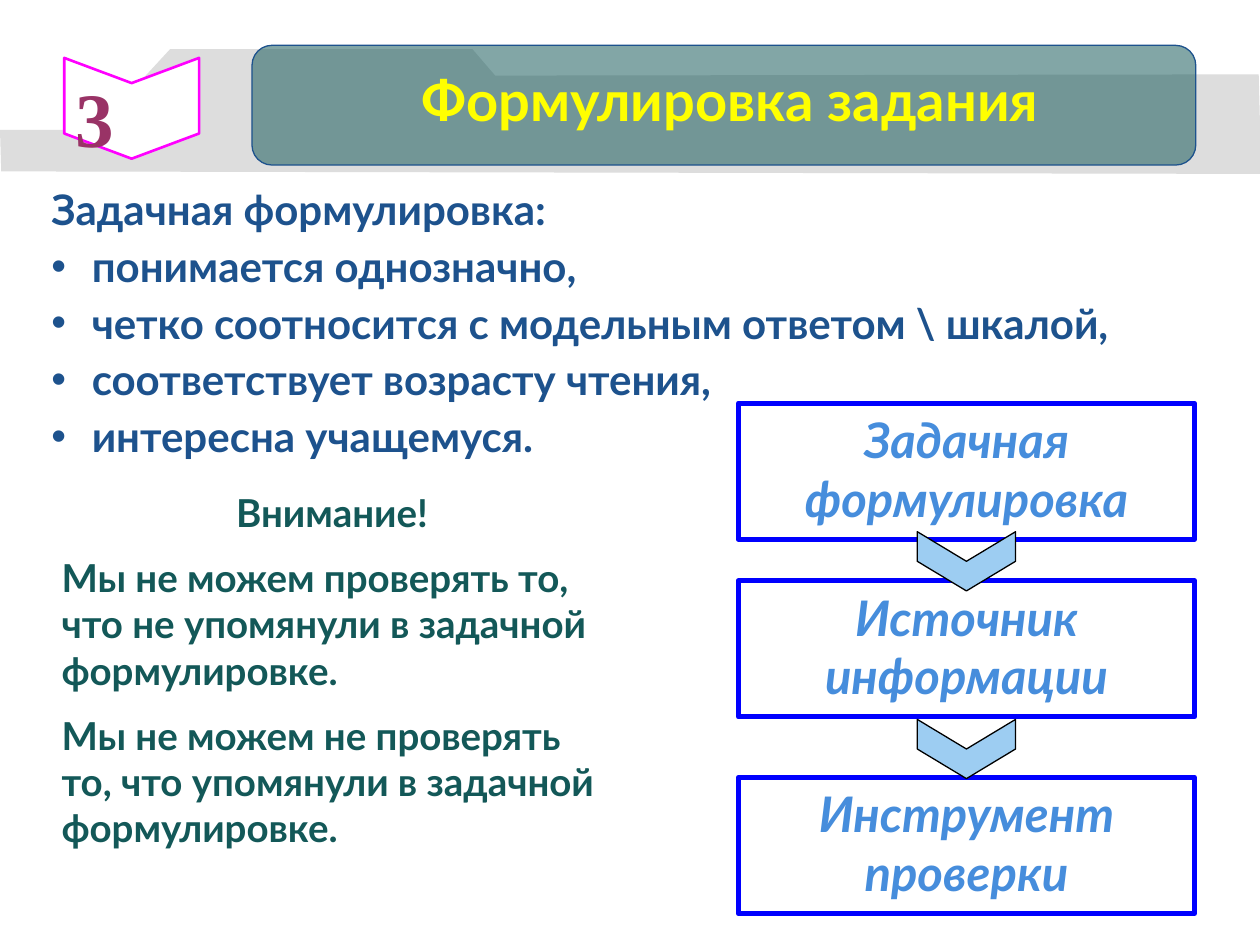
from lxml import etree
from pptx import Presentation
from pptx.dml.color import RGBColor
from pptx.enum.shapes import MSO_SHAPE as Preset
from pptx.enum.text import MSO_ANCHOR as Anchor, PP_ALIGN as Align
from pptx.oxml.ns import qn
from pptx.util import Inches, Pt

COLORS = {
    "band": "DDDDDD", "box_line": "0000FF", "flow_text": "468DDC",
    "teal": "135858", "navy": "1D528D", "arrow": "9DCDF2", "black": "000000",
    "white": "FFFFFF", "magenta": "FF00FF", "number": "993366", "yellow": "FFFF00",
}
FONT = "Lato"
NUMBER_FONT = "Times New Roman"


def color(name):
    return RGBColor.from_string(COLORS[name])


def paint(shape, fill=None, line=None, width=0.75):
    shape.shadow.inherit = False
    if fill:
        shape.fill.solid()
        shape.fill.fore_color.rgb = color(fill)
    else:
        shape.fill.background()
    if line:
        shape.line.color.rgb = color(line)
        shape.line.width = Pt(width)
    else:
        shape.line.fill.background()


def add_preset(slide, preset, box, **look):
    shape = slide.shapes.add_shape(preset, *(Inches(v) for v in box))
    paint(shape, **look)
    return shape


def add_textbox(slide, box):
    return slide.shapes.add_textbox(*(Inches(v) for v in box))


def write(shape, texts, size, ink, align=Align.LEFT, font=FONT, gap=0,
          anchor=Anchor.TOP, wrap=True, italic=False):
    """Fill a shape with paragraphs of one format and return them."""
    frame = shape.text_frame
    frame.word_wrap = wrap
    frame.vertical_anchor = anchor
    frame.text = "\n".join(texts)
    values = {"name": font, "size": Pt(size), "bold": True, "italic": italic}
    for index, paragraph in enumerate(frame.paragraphs):
        paragraph.alignment = align
        paragraph.space_before = Pt(gap if index else 0)
        for run in paragraph.runs:
            for key, value in values.items():
                setattr(run.font, key, value)
            run.font.color.rgb = color(ink)
    return frame.paragraphs


def add_down_chevron(slide, box, **look):
    """Turn a chevron to point down inside the given box."""
    left, top, width, height = box
    shift = (width - height) / 2
    chevron = add_preset(slide, Preset.CHEVRON,
                         (left + shift, top - shift, height, width), **look)
    chevron.rotation = 90
    return chevron


def add_band(slide, box):
    left, top, width, height = box
    points = [(0, 0.64), (0.76, 0.64), (1.35, 0), (3.75, 0), (3.93, 0.21),
              (9.99, 0.2), (width, height), (0.01, 0.97)]
    corners = [(Inches(left + x), Inches(top + y)) for x, y in points]
    builder = slide.shapes.build_freeform(*corners[0])
    builder.add_line_segments(corners[1:])
    paint(builder.convert_to_shape(), fill="band")


def add_header(slide, box):
    left, top, width, height = box
    badge = add_down_chevron(slide, (left, top + 0.1, 1.07, 0.8),
                             fill="white", line="magenta", width=1.5)
    badge.adjustments[0] = 0.25
    number = add_textbox(slide, (left - 0.16, top + 0.17, 0.8, 0.8))
    write(number, ["3"], 44, "number", Align.CENTER, NUMBER_FONT,
          anchor=Anchor.MIDDLE, wrap=False)

    plate = add_preset(slide, Preset.ROUNDED_RECTANGLE,
                       (left + 1.49, top, width - 1.49, height),
                       fill="teal", line="navy")
    plate.adjustments[0] = 0.167
    fill_color = plate.fill._xPr.find(qn("a:solidFill"))[0]
    etree.SubElement(fill_color, qn("a:alpha"), val="53000")
    plate.text_frame.margin_left = Inches(0.2)
    title, = write(plate, ["Формулировка задания"], 32, "yellow", Align.CENTER,
                   anchor=Anchor.MIDDLE, wrap=False)
    title.line_spacing = 0.8


def add_criteria(slide, box):
    texts = ["Задачная формулировка:", "понимается однозначно,",
             "четко соотносится с модельным ответом \\ шкалой,",
             "соответствует возрасту чтения,", "интересна учащемуся."]
    paragraphs = write(add_textbox(slide, box), texts, 24, "navy", gap=3.6)
    indent = Inches(0.32)
    for paragraph in paragraphs[1:]:
        properties = paragraph._p.get_or_add_pPr()
        properties.set("marL", str(indent))
        properties.set("indent", str(-indent))
        etree.SubElement(properties, qn("a:buFont"), typeface="Arial")
        etree.SubElement(properties, qn("a:buChar"), char="•")


def add_warning(slide, box):
    texts = ["Внимание!"] + [
        f"Мы не можем {rule} в задачной формулировке."
        for rule in ("проверять то, что не упомянули",
                     "не проверять то, что упомянули")]
    paragraphs = write(add_textbox(slide, box), texts, 22, "teal", gap=11)
    paragraphs[0].alignment = Align.CENTER


def add_flow(slide, box):
    left, top, width, height = box
    box_height = 1.08
    steps = {"Задачная формулировка": 0, "Источник информации": 1.41,
             "Инструмент проверки": height - box_height}
    for text, offset in steps.items():
        step = add_preset(slide, Preset.RECTANGLE,
                          (left, top + offset, width, box_height),
                          line="box_line", width=3)
        write(step, [text], 28, "flow_text", Align.CENTER, italic=True)
    arrow_width, arrow_height = 0.78, 0.47
    for offset in (1.02, 2.51):
        add_down_chevron(slide, (left + (width - arrow_width) / 2, top + offset,
                                 arrow_width, arrow_height),
                         fill="arrow", line="black")


def main():
    presentation = Presentation()
    presentation.slide_width = Inches(10)
    presentation.slide_height = Inches(7.5)
    slide = presentation.slides.add_slide(presentation.slide_layouts[6])
    add_band(slide, (0, 0.39, 10.01, 0.99))
    add_warning(slide, (0.39, 3.83, 4.49, 3.43))
    add_criteria(slide, (0.31, 1.41, 9.45, 2.36))
    add_flow(slide, (5.86, 3.2, 3.62, 4.05))
    add_header(slide, (0.51, 0.36, 8.98, 0.95))
    presentation.save("out.pptx")


if __name__ == "__main__":
    main()
